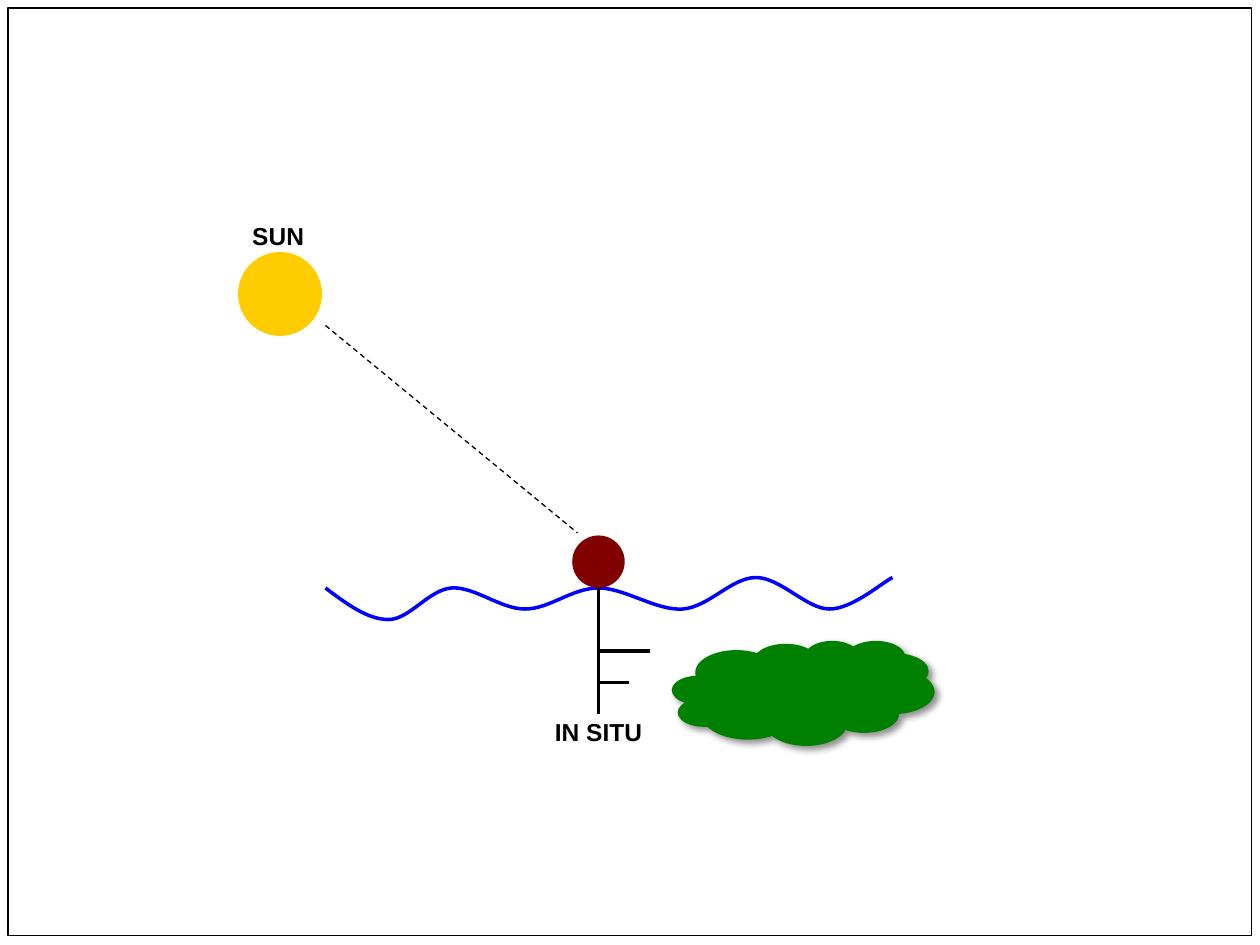
import pptx
import pptx.util
import pptx.dml.color
import pptx.enum.dml
import pptx.enum.shapes
import pptx.enum.text
import pptx.oxml
import pptx.oxml.ns
from lxml import etree

Pt = pptx.util.Pt
qn = pptx.oxml.ns.qn
KIND = pptx.enum.shapes.MSO_SHAPE

THEME = {
    "font": "Arial", "size": 14,
    "ink": "000000", "sea": "0000FF", "buoy": "800000",
    "sun": "FFCC00", "cloud": "008000",
    "thin": 0.75, "thick": 2,
}

# Left, top, width, height
FRAME = (4.5, 4.5, 710.5, 530)
BUOY = (327, 306, 30, 30)
SUN = (136, 144, 48, 48)
CLOUD = (384, 366, 150, 60)
LABEL = (102, 24)

# Start, then two control points and an end point for each curve
WAVE_START = (186, 336)
WAVE = [
    ((198, 345), (210, 354), (222, 354)),
    ((234, 354), (245, 337), (258, 336)),
    ((271, 335), (286, 348), (300, 348)),
    ((314, 348), (327, 336), (342, 336)),
    ((357, 336), (375, 349), (390, 348)),
    ((405, 347), (418, 330), (432, 330)),
    ((446, 330), (461, 348), (474, 348)),
    ((487, 348), (504, 333), (510, 330)),
]

MAST = ((342, 336), (342, 408))
ARMS = [(372, 30), (390, 18)]  # height on the slide, length
RAY = ((186, 186), (330, 304.5))


def color(name):
    return pptx.dml.color.RGBColor.from_string(THEME[name])


def shape(shapes, kind, box, fill=None, line=None):
    item = shapes.add_shape(kind, *map(Pt, box))
    item.shadow.inherit = False
    if fill:
        item.fill.solid()
        item.fill.fore_color.rgb = color(fill)
    else:
        item.fill.background()
    if line:
        item.line.color.rgb = color(line)
        item.line.width = Pt(THEME["thin"])
    else:
        item.line.fill.background()
    return item


def line(shapes, start, end, width="thick", dash=None):
    item = shapes.add_connector(
        pptx.enum.shapes.MSO_CONNECTOR.STRAIGHT, *map(Pt, start + end))
    item.line.color.rgb = color("ink")
    item.line.width = Pt(THEME[width])
    if dash:
        item.line.dash_style = dash
    etree.SubElement(item._element.spPr, qn("a:effectLst"))


def text(shapes, words, left, top, size=THEME["size"], bold=True, ink="ink"):
    item = shapes.add_textbox(*map(Pt, (left, top) + LABEL))
    item.text_frame.word_wrap = True
    para = item.text_frame.paragraphs[0]
    para.alignment = pptx.enum.text.PP_ALIGN.CENTER
    run = para.add_run()
    run.text = words
    run.font.name = THEME["font"]
    run.font.size = Pt(size)
    run.font.bold = bold
    run.font.color.rgb = color(ink)


def wave(shapes):
    """Draw the sea line, turning each straight segment into a cubic curve."""
    pen = shapes.build_freeform(*map(Pt, WAVE_START))
    pen.add_line_segments(
        [tuple(map(Pt, curve[-1])) for curve in WAVE], close=False)
    item = pen.convert_to_shape()
    item.shadow.inherit = False
    item.fill.background()
    item.line.color.rgb = color("sea")
    item.line.width = Pt(THEME["thick"])
    for step, curve in zip(list(item._element.iter(qn("a:lnTo"))), WAVE):
        step.tag = qn("a:cubicBezTo")
        step.remove(step[0])
        for x, y in curve:
            etree.SubElement(step, qn("a:pt"), x=str(Pt(x) - item.left),
                             y=str(Pt(y) - item.top))


def shade(item):
    """Give the shape a soft shadow to the lower right."""
    effects = item._element.spPr.find(qn("a:effectLst"))
    cast = etree.SubElement(
        effects, qn("a:outerShdw"), blurRad=str(Pt(4)), dist=str(Pt(3)),
        dir="2700000", algn="tl", rotWithShape="0")
    tint = etree.SubElement(cast, qn("a:srgbClr"), val=THEME["ink"])
    etree.SubElement(tint, qn("a:alpha"), val="43000")


def main():
    deck = pptx.Presentation()
    deck.slide_width, deck.slide_height = Pt(720), Pt(540)
    shapes = deck.slides.add_slide(deck.slide_layouts[6]).shapes
    shape(shapes, KIND.RECTANGLE, FRAME, line="ink")

    station = shapes.add_group_shape().shapes
    wave(station)
    shape(station, KIND.OVAL, BUOY, fill="buoy")
    line(station, *MAST)
    for y, length in ARMS:
        x = MAST[0][0] - 0.5
        line(station, (x, y), (x + length, y))
    text(shapes, "IN SITU", MAST[0][0] - LABEL[0] / 2, 406)

    sky = shapes.add_group_shape().shapes
    shape(sky, KIND.OVAL, SUN, fill="sun")
    text(sky, "SUN", 108, 123)

    line(shapes, *RAY, width="thin", dash=pptx.enum.dml.MSO_LINE.DASH)
    shade(shape(shapes, KIND.CLOUD, CLOUD, fill="cloud"))
    deck.save("out.pptx")


if __name__ == "__main__":
    main()
